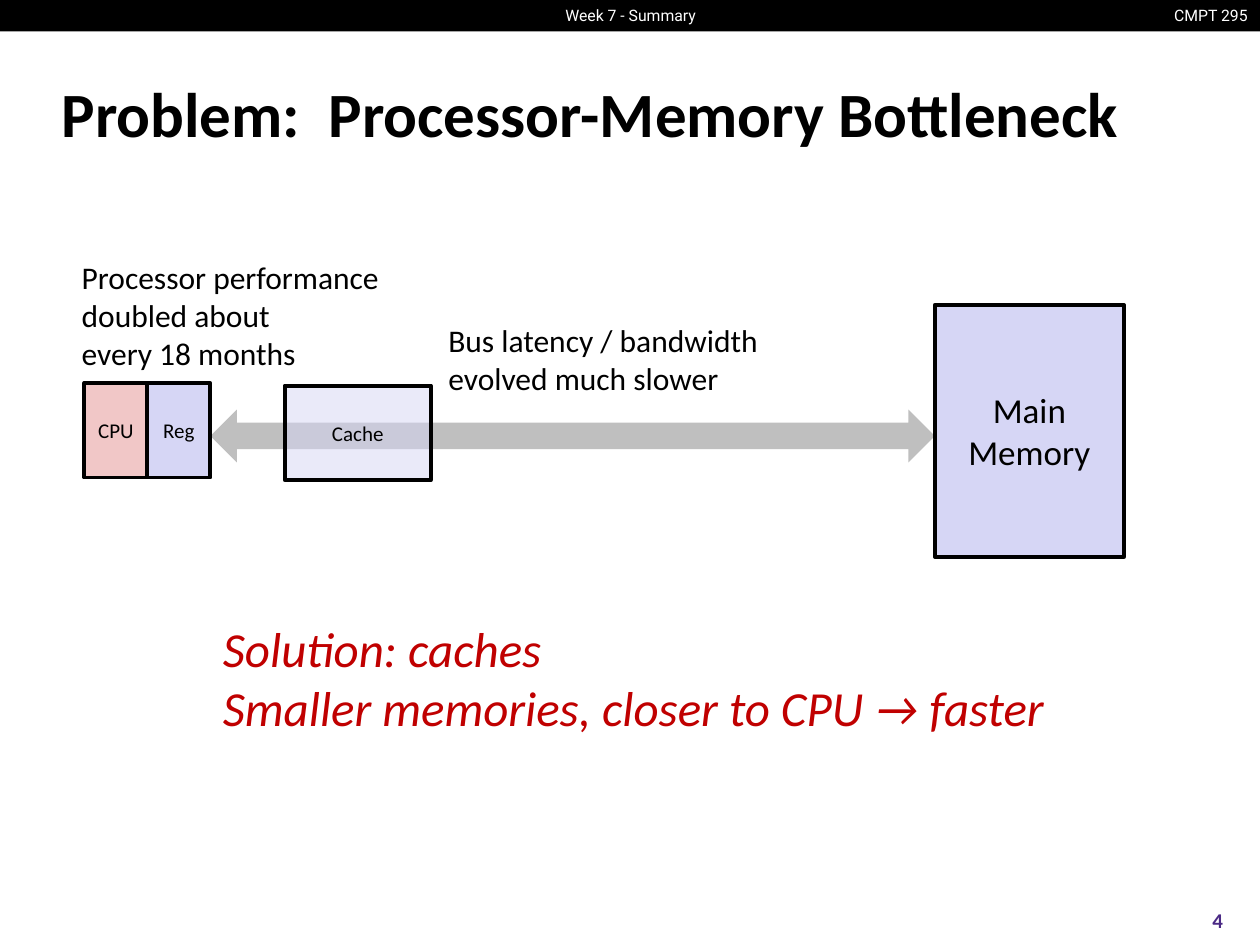
from lxml.etree import SubElement
from pptx import Presentation
from pptx.dml.color import RGBColor
from pptx.enum.shapes import MSO_SHAPE as Shape
from pptx.enum.text import MSO_ANCHOR as Anchor, PP_ALIGN as Align
from pptx.oxml.ns import qn
from pptx.util import Inches, Pt

BLACK, WHITE, GRAY = "000000", "FFFFFF", "BFBFBF"
LAVENDER, PINK, RED, PURPLE = "D6D6F5", "F1C7C7", "C00000", "4B2A85"


def color(value):
    return RGBColor.from_string(value)


def write(frame, text, font="Calibri", size=18, ink=BLACK, bold=False,
          italic=False, align=Align.LEFT, anchor=Anchor.TOP):
    frame.word_wrap = True
    frame.vertical_anchor = anchor
    for index, line in enumerate(text.split("\n")):
        para = frame.add_paragraph() if index else frame.paragraphs[0]
        para.alignment = align
        span = para.add_run()
        span.text = line
        span.font.name = font
        span.font.size = Pt(size)
        span.font.bold = bold
        span.font.italic = italic
        span.font.color.rgb = color(ink)


class SlideBuilder:
    border = 2.25

    def __init__(self, deck):
        self.page = deck.slides.add_slide(deck.slide_layouts[5])

    def title(self, place, text):
        box = self.page.shapes.title
        box.left, box.top, box.width, box.height = map(Inches, place)
        write(box.text_frame, text, size=36, bold=True, anchor=Anchor.MIDDLE)

    def label(self, place, text, **style):
        box = self.page.shapes.add_textbox(*map(Inches, place))
        write(box.text_frame, text, **style)

    def shape(self, kind, place, fill):
        box = self.page.shapes.add_shape(kind, *map(Inches, place))
        box.shadow.inherit = False
        box.fill.solid()
        box.fill.fore_color.rgb = color(fill)
        box.line.fill.background()
        return box

    def block(self, place, text, fill=LAVENDER, size=12, opacity=None):
        box = self.shape(Shape.RECTANGLE, place, fill)
        box.line.color.rgb = color(BLACK)
        box.line.width = Pt(self.border)
        if opacity is not None:
            tint = box.fill._xPr.find(qn("a:solidFill"))[0]
            SubElement(tint, qn("a:alpha"), val=str(opacity * 1000))
        frame = box.text_frame
        frame.margin_left = frame.margin_right = 0
        write(frame, text, size=size, align=Align.CENTER, anchor=Anchor.MIDDLE)


def main():
    deck = Presentation()
    deck.slide_width, deck.slide_height = Inches(10), Inches(7.5)
    slide = SlideBuilder(deck)

    header = dict(font="Roboto", size=9, ink=WHITE)
    slide.shape(Shape.RECTANGLE, (0, 0, 10, 0.25), BLACK)
    slide.label((9.19, 0, 0.81, 0.25), "CMPT 295", align=Align.RIGHT, **header)
    slide.label((4.3, 0, 1.41, 0.25), "Week 7 - Summary", align=Align.CENTER, **header)
    slide.title((0.39, 0.48, 9.28, 0.83), "Problem:  Processor-Memory Bottleneck")

    slide.shape(Shape.LEFT_RIGHT_ARROW, (1.67, 3.25, 5.75, 0.42), GRAY)
    slide.block((7.42, 2.42, 1.5, 2), "Main Memory", size=20)
    slide.block((0.67, 3.04, 0.5, 0.75), "CPU", fill=PINK)
    slide.block((1.17, 3.04, 0.5, 0.75), "Reg")
    slide.block((2.26, 3.06, 1.16, 0.75), "Cache", opacity=50)

    slide.label((0.55, 2, 2.62, 1.01),
                "Processor performance\ndoubled about\nevery 18 months")
    slide.label((3.46, 2.5, 2.75, 0.71),
                "Bus latency / bandwidth\nevolved much slower")
    slide.label((1.67, 4.86, 6.97, 1.04),
                "Solution: caches\nSmaller memories, closer to CPU → faster",
                size=28, ink=RED, italic=True)
    slide.label((9.33, 7.1, 0.67, 0.4), "4", size=12, ink=PURPLE, bold=True,
                align=Align.CENTER, anchor=Anchor.MIDDLE)
    deck.save("out.pptx")


if __name__ == "__main__":
    main()
